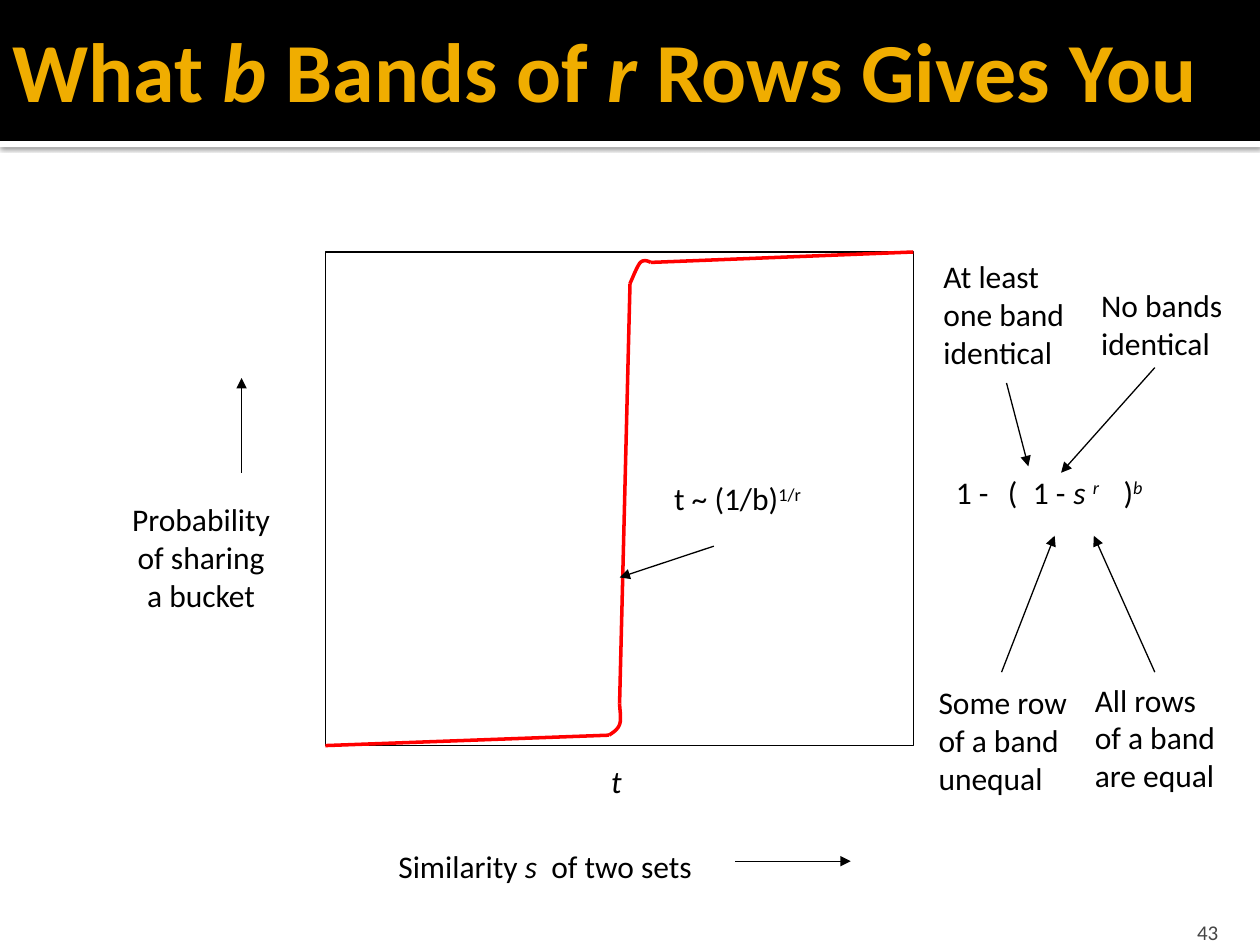
from dataclasses import dataclass

from lxml import etree
from pptx import Presentation
from pptx.dml.color import RGBColor
from pptx.enum.shapes import MSO_CONNECTOR, MSO_SHAPE
from pptx.enum.text import MSO_ANCHOR, MSO_AUTO_SIZE, PP_ALIGN
from pptx.oxml.ns import qn
from pptx.util import Cm, Pt

RECTANGLE = MSO_SHAPE.RECTANGLE
STRAIGHT = MSO_CONNECTOR.STRAIGHT
LEFT, CENTER, RIGHT = PP_ALIGN.LEFT, PP_ALIGN.CENTER, PP_ALIGN.RIGHT
TOP, MIDDLE, BOTTOM = MSO_ANCHOR.TOP, MSO_ANCHOR.MIDDLE, MSO_ANCHOR.BOTTOM
GROW = MSO_AUTO_SIZE.SHAPE_TO_FIT_TEXT

FONT = "Calibri"
COLORS = {
    "black": "000000",
    "white": "FFFFFF",
    "gold": "F0AD00",
    "gray": "454545",
    "red": "FF0000",
}
WIDTH, HEIGHT = 25.4, 19.05
HEADER_HEIGHT = 2.84
FORMULA_TOP = 9.4
THIN, THICK = 0.75, 2
CURVE_STEPS = 12

Point = tuple[float, float]


@dataclass(frozen=True)
class Span:
    text: str
    italic: bool = False
    raised: bool = False


@dataclass(frozen=True)
class Label:
    left: float
    top: float
    width: float
    height: float
    paragraphs: list[list[Span]]
    align: int = LEFT
    size: float = 18
    color: str = "black"
    bold: bool = False
    wrap: bool = False
    anchor: int = TOP
    margins: tuple[float, float, float, float] = (0.25, 0.13, 0.25, 0.13)


def plain(*lines: str) -> list[list[Span]]:
    return [[Span(line)] for line in lines]


def rgb(name: str) -> RGBColor:
    return RGBColor.from_string(COLORS[name])


def add_label(slide, label: Label) -> None:
    shape = slide.shapes.add_textbox(
        Cm(label.left), Cm(label.top), Cm(label.width), Cm(label.height)
    )
    frame = shape.text_frame
    frame.word_wrap = label.wrap
    if not label.wrap:
        frame.auto_size = GROW
    frame.vertical_anchor = label.anchor
    (frame.margin_left, frame.margin_top,
     frame.margin_right, frame.margin_bottom) = map(Cm, label.margins)
    frame.text = "\n".join("" for _ in label.paragraphs)
    for paragraph, spans in zip(frame.paragraphs, label.paragraphs):
        paragraph.alignment = label.align
        for span in spans:
            run = paragraph.add_run()
            run.text = span.text
            run.font.name = FONT
            run.font.size = Pt(label.size)
            run.font.bold = label.bold
            run.font.italic = span.italic
            run.font.color.rgb = rgb(label.color)
            if span.raised:
                run._r.get_or_add_rPr().set("baseline", "30000")


def add_line(slide, start: Point, end: Point, color: str, width: float, arrow: bool) -> None:
    connector = slide.shapes.add_connector(STRAIGHT, *map(Cm, start + end))
    connector.line.color.rgb = rgb(color)
    connector.line.width = Pt(width)
    if arrow:
        etree.SubElement(connector.line._get_or_add_ln(), qn("a:tailEnd"), type="triangle")
    etree.SubElement(connector._element.spPr, qn("a:effectLst"))


def add_band(slide, top: float, height: float, color: str):
    shape = slide.shapes.add_shape(RECTANGLE, 0, Cm(top), Cm(WIDTH), Cm(height))
    shape.shadow.inherit = False
    shape.fill.solid()
    shape.fill.fore_color.rgb = rgb(color)
    shape.line.fill.background()
    return shape


def add_drop_shadow(shape) -> None:
    effects = shape._element.spPr.find(qn("a:effectLst"))
    shadow = etree.SubElement(
        effects, qn("a:outerShdw"), blurRad=str(Pt(2.5)), dist=str(Pt(0.8)),
        dir="5400000", algn="tl", rotWithShape="0",
    )
    color = etree.SubElement(shadow, qn("a:srgbClr"), val=COLORS["black"])
    etree.SubElement(color, qn("a:alpha"), val="60000")


def bezier(points: list[Point]) -> list[Point]:
    samples = []
    for step in range(1, CURVE_STEPS + 1):
        t = step / CURVE_STEPS
        weights = ((1 - t) ** 3, 3 * t * (1 - t) ** 2, 3 * t * t * (1 - t), t ** 3)
        x, y = (sum(w * p[axis] for w, p in zip(weights, points)) for axis in (0, 1))
        samples.append((x, y))
    return samples


def add_bend(slide, points: list[Point]) -> None:
    outline = bezier(points[:4]) + bezier(points[3:])
    builder = slide.shapes.build_freeform(*map(Cm, points[0]))
    builder.add_line_segments([(Cm(x), Cm(y)) for x, y in outline], close=False)
    shape = builder.convert_to_shape()
    shape.shadow.inherit = False
    shape.fill.background()
    shape.line.color.rgb = rgb("red")
    shape.line.width = Pt(THICK)


TITLE = Label(
    0, -0.2, WIDTH, 3.18,
    [[Span("What "), Span("b ", True), Span("Bands of "), Span("r ", True),
      Span("Rows Gives You")]],
    size=48, color="gold", bold=True, wrap=True, anchor=MIDDLE,
    margins=(0.25, 0.13, 0.13, 0.13),
)
SLIDE_NUMBER = Label(
    22.78, 18.29, 2.03, 0.76, plain("43"), RIGHT, 12, "gray",
    wrap=True, anchor=BOTTOM, margins=(0.25, 0.13, 0.25, 0),
)
AXIS_LABELS = [
    Label(7.47, 16.94, 7.04, 1.02,
          [[Span("Similarity "), Span("s ", True), Span(" of two sets")]], CENTER),
    Label(2.34, 9.96, 3.43, 2.54, plain("Probability", "of sharing", "a bucket"), CENTER),
    Label(12.07, 15.24, 0.71, 1.02, [[Span("t", True)]], CENTER),
]
FORMULA = [
    Label(19.02, FORMULA_TOP, 1.55, 1.27, plain("1 -")),
    Label(20.07, FORMULA_TOP, 0.84, 1.27, plain("(")),
    Label(20.57, FORMULA_TOP, 1.55, 1.27, plain("1 -")),
    Label(21.39, FORMULA_TOP, 1.52, 1.27, [[Span("s ", True), Span("r", True, True)]]),
    Label(22.4, FORMULA_TOP, 1.32, 1.27, [[Span(")"), Span("b", True, True)]]),
]
EXPLANATIONS = [
    Label(21.82, 13.59, 3.18, 2.54, plain("All rows", "of a band", "are equal")),
    Label(18.67, 13.64, 3.33, 2.54, plain("Some row", "of a band", "unequal")),
    Label(21.95, 5.64, 3.15, 1.78, plain("No bands", "identical")),
    Label(18.77, 5.05, 3.12, 2.54, plain("At least", "one band", "identical")),
    Label(13.34, 9.53, 4.75, 1.27, [[Span("t ~ (1/b)"), Span("1/r", raised=True)]]),
]
ARROWS = [
    ((14.82, 17.36), (17.15, 17.36)),
    ((4.87, 9.53), (4.87, 7.62)),
    ((23.28, 13.55), (22.05, 10.8)),
    ((20.19, 13.55), (21.26, 10.8)),
    ((23.28, 7.41), (21.39, 9.53)),
    ((20.29, 7.72), (20.73, 9.4)),
    ((14.39, 11.01), (12.49, 11.64)),
]
PLOT = (6.56, 5.08, 11.85, 9.95)
LOWER_BEND = [(12.28, 14.82), (12.37, 14.76), (12.45, 14.71), (12.49, 14.61),
              (12.53, 14.5), (12.5, 14.35), (12.49, 14.18)]
UPPER_BEND = [(12.7, 5.72), (12.78, 5.54), (12.85, 5.36), (12.91, 5.29),
              (12.98, 5.23), (13.06, 5.26), (13.12, 5.29)]


def add_plot(slide) -> None:
    left, top, width, height = PLOT
    frame = slide.shapes.add_shape(RECTANGLE, *map(Cm, PLOT))
    frame.shadow.inherit = False
    frame.fill.background()
    frame.line.color.rgb = rgb("black")
    frame.line.width = Pt(THIN)
    for start, end in (
        ((left, top + height), LOWER_BEND[0]),
        (LOWER_BEND[-1], UPPER_BEND[0]),
        (UPPER_BEND[-1], (left + width, top)),
    ):
        add_line(slide, start, end, "red", THICK, arrow=False)
    for bend in (LOWER_BEND, UPPER_BEND):
        add_bend(slide, bend)


def main() -> None:
    presentation = Presentation()
    presentation.slide_width, presentation.slide_height = Cm(WIDTH), Cm(HEIGHT)
    slide = presentation.slides.add_slide(presentation.slide_layouts[6])
    add_drop_shadow(add_band(slide, HEADER_HEIGHT, 0.13, "white"))
    add_band(slide, 0, HEADER_HEIGHT, "black")
    add_plot(slide)
    for label in [SLIDE_NUMBER, TITLE, *AXIS_LABELS, *FORMULA, *EXPLANATIONS]:
        add_label(slide, label)
    for start, end in ARROWS:
        add_line(slide, start, end, "black", THIN, arrow=True)
    presentation.save("out.pptx")


if __name__ == "__main__":
    main()
